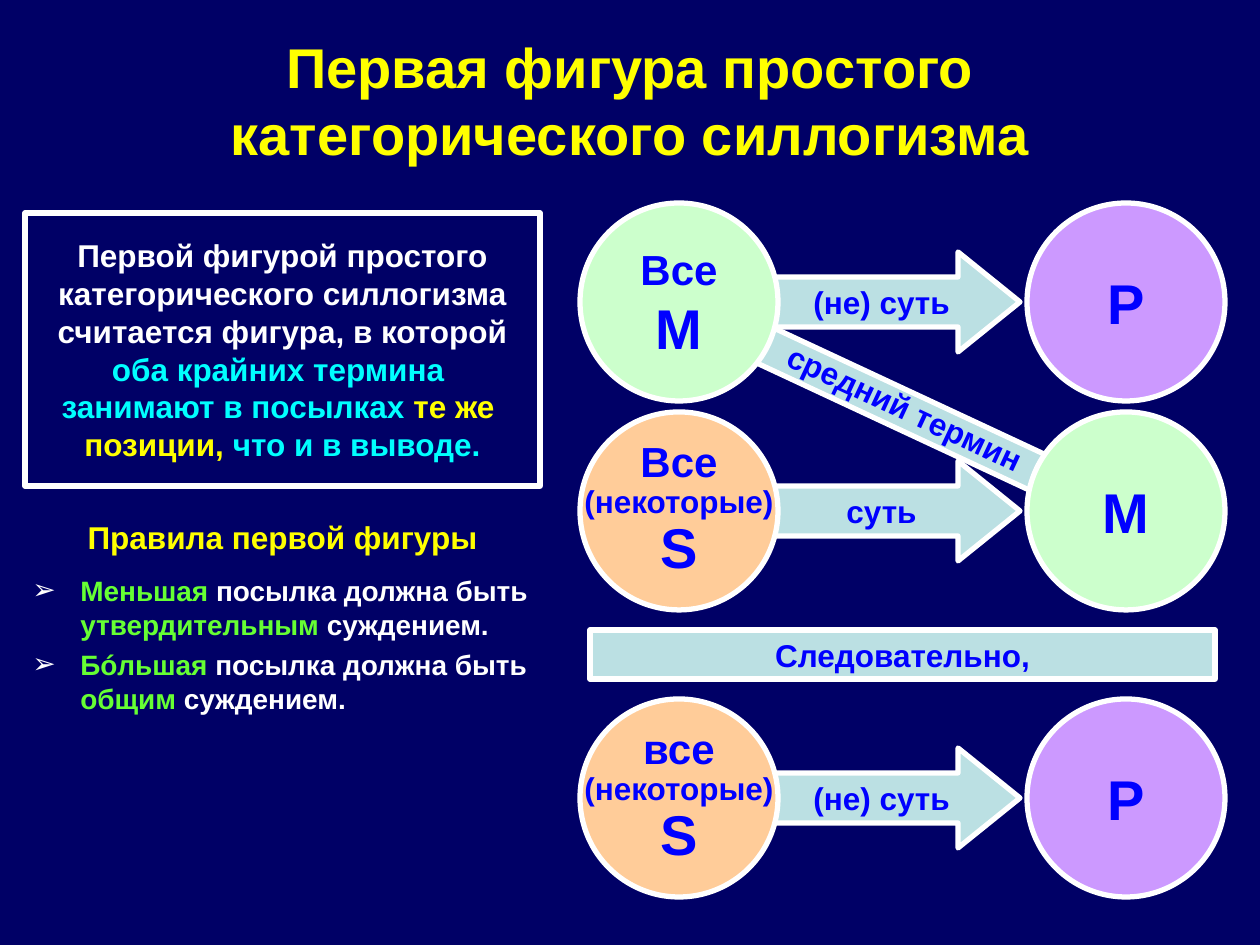
"""Build the slide on the first figure of the simple categorical syllogism."""
from typing import NamedTuple, Optional

from lxml import etree
from pptx import Presentation
from pptx import util as u
from pptx.dml.color import RGBColor
from pptx.enum import shapes, text
from pptx.oxml.ns import qn

NAVY = RGBColor(0x00, 0x00, 0x66)
WHITE = RGBColor(0xFF, 0xFF, 0xFF)
YELLOW = RGBColor(0xFF, 0xFF, 0x00)
CYAN = RGBColor(0x00, 0xFF, 0xFF)
LIME = RGBColor(0x66, 0xFF, 0x33)
BLUE = RGBColor(0x00, 0x00, 0xFF)
ICE = RGBColor(0xBB, 0xE0, 0xE3)
PEACH = RGBColor(0xFF, 0xCC, 0x99)
VIOLET = RGBColor(0xCC, 0x99, 0xFF)
MINT = RGBColor(0xCC, 0xFF, 0xCC)

SUBJECT_X, PREDICATE_X, ARROW_X = 580, 1027, 774
CIRCLE, ARROW_WIDTH, ARROW_HEIGHT = 198, 246, 100
MAJOR_Y, MINOR_Y, CONCLUSION_Y = 203, 412, 699


class Run(NamedTuple):
    text: str
    color: Optional[RGBColor] = None
    size: Optional[int] = None


def px(length):
    return u.Emu(round(length * 914400 / 126))


class SlideBuilder:
    font = "Arial"
    line_width = u.Pt(3)

    def __init__(self, presentation):
        self.slide = presentation.slides.add_slide(presentation.slide_layouts[6])
        self.slide.background.fill.solid()
        self.slide.background.fill.fore_color.rgb = NAVY

    def fill_paragraph(self, paragraph, runs, size=18, color=BLUE, align=text.PP_ALIGN.CENTER):
        paragraph.alignment = align
        paragraph.font.name = self.font
        paragraph.font.bold = True
        paragraph.font.size = u.Pt(size)
        paragraph.font.color.rgb = color
        for part in runs:
            for index, line in enumerate(part.text.split("\n")):
                if index:
                    paragraph.add_line_break()
                if not line:
                    continue
                run = paragraph.add_run()
                run.text = line
                if part.color is not None:
                    run.font.color.rgb = part.color
                if part.size is not None:
                    run.font.size = u.Pt(part.size)

    def shape(self, kind, box, fill, runs, size=18, wrap=False, spacing=None):
        shape = self.slide.shapes.add_shape(kind, *map(px, box))
        shape.shadow.inherit = False
        if fill is None:
            shape.fill.background()
        else:
            shape.fill.solid()
            shape.fill.fore_color.rgb = fill
        shape.line.color.rgb = WHITE
        shape.line.width = self.line_width
        frame = shape.text_frame
        frame.word_wrap = wrap
        frame.vertical_anchor = text.MSO_ANCHOR.MIDDLE
        paragraph = frame.paragraphs[0]
        if spacing:
            paragraph.line_spacing = spacing
        self.fill_paragraph(paragraph, runs, size)
        return shape

    def bar(self, box, runs, kind=shapes.MSO_SHAPE.RECTANGLE):
        bar = self.shape(kind, box, ICE, runs)
        bar.text_frame.margin_top = bar.text_frame.margin_bottom = 0
        return bar

    def circle(self, left, top, fill, runs, spacing=None):
        box = (left, top, CIRCLE, CIRCLE)
        self.shape(shapes.MSO_SHAPE.OVAL, box, fill, runs, 32, spacing=spacing)

    def arrow(self, row_y, label):
        box = (ARROW_X, row_y + (CIRCLE - ARROW_HEIGHT) // 2, ARROW_WIDTH, ARROW_HEIGHT)
        arrow = self.bar(box, [Run(label)], shapes.MSO_SHAPE.RIGHT_ARROW)
        arrow.adjustments[0] = 0.5
        arrow.adjustments[1] = 0.62

    def text_box(self, box, anchor=text.MSO_ANCHOR.TOP):
        frame = self.slide.shapes.add_textbox(*map(px, box)).text_frame
        frame.word_wrap = True
        frame.vertical_anchor = anchor
        return frame

    def bullet(self, frame, runs):
        paragraph = frame.add_paragraph()
        paragraph.space_before = u.Pt(4)
        properties = paragraph._p.get_or_add_pPr()
        properties.set("marL", str(px(48)))
        properties.set("indent", str(-px(48)))
        color = etree.SubElement(properties, qn("a:buClr"))
        etree.SubElement(color, qn("a:srgbClr"), val=str(WHITE))
        etree.SubElement(properties, qn("a:buFont"), typeface=self.font)
        etree.SubElement(properties, qn("a:buChar"), char="➢")
        self.fill_paragraph(paragraph, runs, 16, WHITE, text.PP_ALIGN.LEFT)


def main():
    presentation = Presentation()
    presentation.slide_width, presentation.slide_height = px(1260), px(945)
    builder = SlideBuilder(presentation)

    def some(quantifier):
        return [Run(f"{quantifier}\n", size=24), Run("(некоторые)\n", size=18), Run("S")]

    builder.arrow(MAJOR_Y, "(не) суть")
    builder.arrow(CONCLUSION_Y, "(не) суть")
    builder.circle(SUBJECT_X, CONCLUSION_Y, PEACH, some("все"), 0.9)
    builder.circle(PREDICATE_X, CONCLUSION_Y, VIOLET, [Run("P")])
    builder.bar((590, 630, 625, 49), [Run("Следовательно,")])

    middle_term = builder.bar((737, 387, 318, 39), [Run("средний термин")])
    middle_term.rotation = 25
    middle_term.text_frame.margin_left = px(30)
    middle_term.text_frame.margin_bottom = px(6)

    builder.circle(SUBJECT_X, MAJOR_Y, MINT, [Run("Все\n", size=24), Run("M")])
    builder.circle(PREDICATE_X, MAJOR_Y, VIOLET, [Run("P")])
    builder.circle(PREDICATE_X, MINOR_Y, MINT, [Run("M")])

    definition = [
        Run("Первой фигурой простого категорического силлогизма "
            "считается фигура, в которой ", WHITE),
        Run("оба крайних термина \nзанимают в посылках ", CYAN),
        Run("те же \nпозиции,", YELLOW),
        Run(" что и в выводе.", CYAN),
    ]
    builder.shape(shapes.MSO_SHAPE.RECTANGLE, (25, 213, 515, 273), None, definition, wrap=True)

    rules = builder.text_box((20, 512, 525, 213))
    builder.fill_paragraph(rules.paragraphs[0], [Run("Правила первой фигуры")], color=YELLOW)
    rules.paragraphs[0].space_after = u.Pt(6)
    for premise, quality in (("Меньшая", "утвердительным"), ("Бóльшая", "общим")):
        builder.bullet(rules, [Run(premise, LIME), Run(" посылка должна быть "),
                               Run(quality, LIME), Run(" суждением.")])

    builder.arrow(MINOR_Y, "суть")
    builder.circle(SUBJECT_X, MINOR_Y, PEACH, some("Все"), 0.9)

    title = builder.text_box((63, 38, 1134, 123), text.MSO_ANCHOR.MIDDLE)
    builder.fill_paragraph(title.paragraphs[0],
                           [Run("Первая фигура простого категорического силлогизма")], 32, YELLOW)
    presentation.save("out.pptx")


if __name__ == "__main__":
    main()
